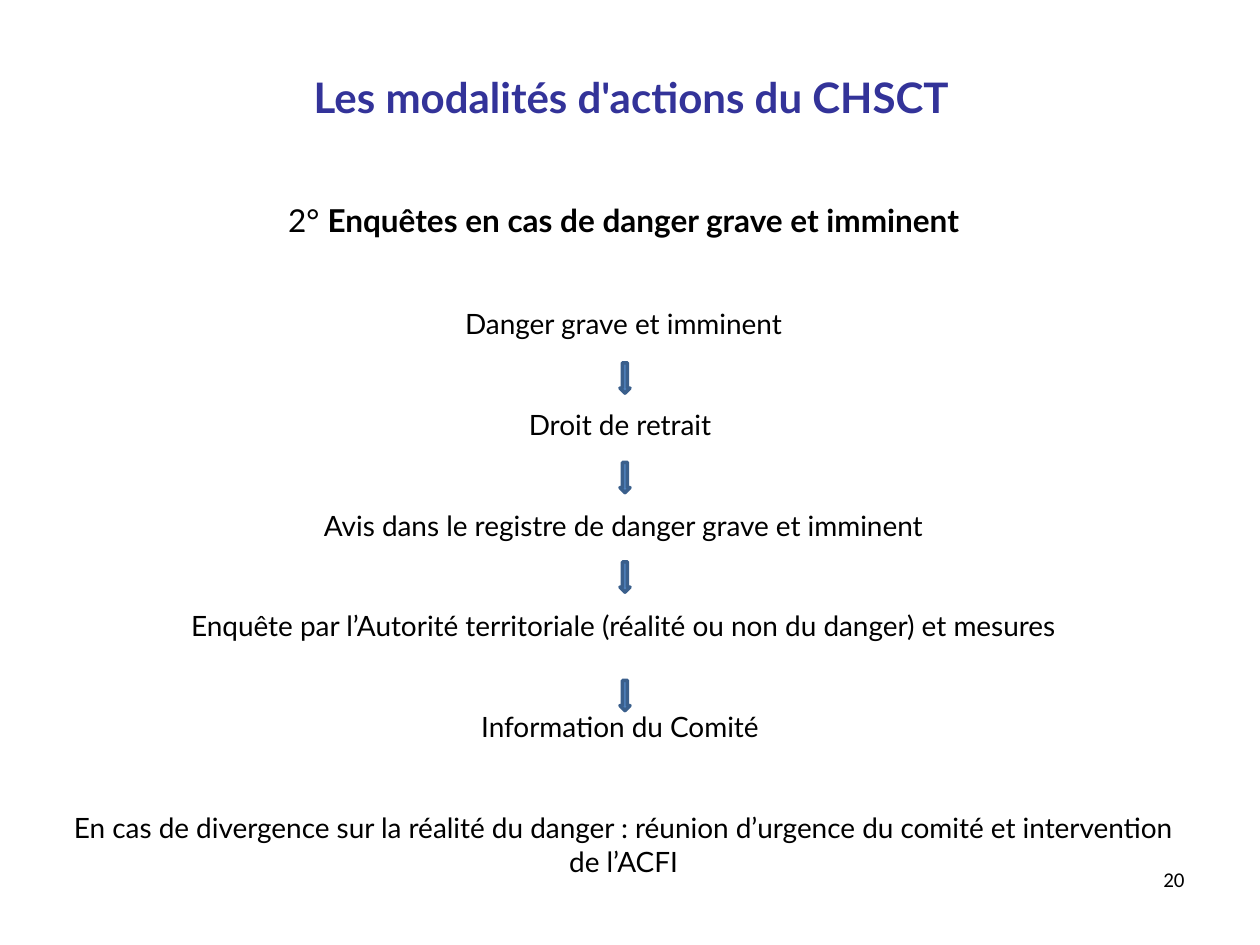
import pptx
import pptx.dml.color
import pptx.enum.shapes
import pptx.enum.text
import pptx.util

Inches = pptx.util.Inches
Pt = pptx.util.Pt
ALIGN = pptx.enum.text.PP_ALIGN

COLORS = {
    "title": "333399",
    "text": "000000",
    "arrow": "4F81BD",
    "arrow_edge": "3A5F8C",
}

STEPS = [
    "Danger grave et imminent",
    "Droit de retrait ",
    "Avis dans le registre de danger grave et imminent",
    "Enquête par l’Autorité territoriale (réalité ou non du danger) et mesures",
    "Information du Comité ",
    "En cas de divergence sur la réalité du danger : réunion d’urgence du comité "
    "et intervention de l’ACFI",
]
ARROW_TOPS = [2.88, 3.67, 4.46, 5.4]
STEP_GAP = 38.4


def rgb(name):
    return pptx.dml.color.RGBColor.from_string(COLORS[name])


def add_text_frame(slide, left, top, width, height):
    box = slide.shapes.add_textbox(Inches(left), Inches(top), Inches(width), Inches(height))
    box.text_frame.word_wrap = True
    return box.text_frame


def format_run(run, size, color="text", bold=False, font="Lato"):
    run.font.name = font
    run.font.size = Pt(size)
    run.font.bold = bold
    run.font.color.rgb = rgb(color)


def add_label(slide, area, text, align, size, **style):
    frame = add_text_frame(slide, *area)
    frame.text = text
    label = frame.paragraphs[0]
    label.alignment = align
    format_run(label.runs[0], size, **style)


def add_procedure(slide):
    frame = add_text_frame(slide, 0.45, 1.58, 9, 5.11)
    heading = frame.paragraphs[0]
    heading.alignment = ALIGN.CENTER
    heading.line_spacing = 0.9
    heading.space_after = Pt(0)
    for text, bold in [("2° ", False), ("Enquêtes en cas de danger grave et imminent", True)]:
        run = heading.add_run()
        run.text = text
        format_run(run, 18, bold=bold)
    for text in STEPS:
        step = frame.add_paragraph()
        step.text = text
        step.alignment = ALIGN.CENTER
        step.space_before = Pt(STEP_GAP)
        format_run(step.runs[0], 16)


def add_down_arrow(slide, top):
    arrow = slide.shapes.add_shape(
        pptx.enum.shapes.MSO_SHAPE.DOWN_ARROW,
        Inches(4.92), Inches(top), Inches(0.08), Inches(0.24))
    arrow.shadow.inherit = False
    arrow.fill.solid()
    arrow.fill.fore_color.rgb = rgb("arrow")
    arrow.line.color.rgb = rgb("arrow_edge")
    arrow.line.width = Pt(2)


def main():
    deck = pptx.Presentation()
    deck.slide_width = Inches(10)
    deck.slide_height = Inches(7.5)
    slide = deck.slides.add_slide(deck.slide_layouts[6])
    add_label(slide, (7.17, 6.83, 2.33, 0.52), "20", ALIGN.RIGHT, 12, font="Calibri")
    add_label(slide, (0.51, 0.52, 9, 0.56), "Les modalités d'actions du CHSCT",
              ALIGN.CENTER, 24, color="title", bold=True)
    add_procedure(slide)
    for top in ARROW_TOPS:
        add_down_arrow(slide, top)
    deck.save("out.pptx")


if __name__ == "__main__":
    main()
